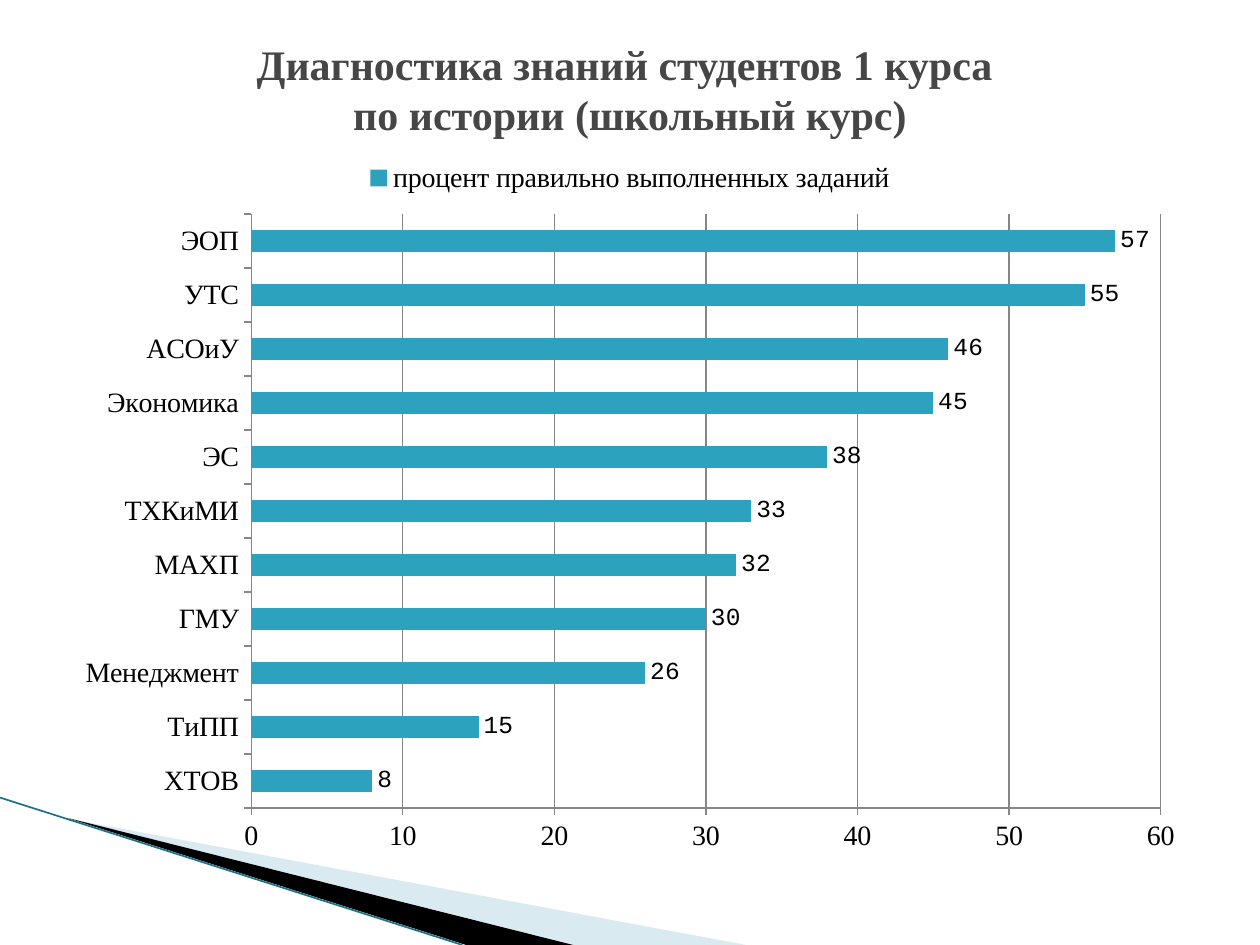
from lxml.etree import SubElement
from pptx import Presentation
from pptx.chart.data import CategoryChartData as ChartData
from pptx.dml.color import RGBColor as Rgb
from pptx.enum.chart import XL_CHART_TYPE as ChartType, XL_LABEL_POSITION as LabelPlace
from pptx.enum.chart import XL_LEGEND_POSITION as LegendPlace, XL_TICK_MARK as Tick
from pptx.enum.shapes import MSO_CONNECTOR as Connector
from pptx.enum.text import MSO_ANCHOR as Anchor, PP_ALIGN as Align
from pptx.oxml.ns import qn
from pptx.util import Inches, Pt

COLORS = {"bar": "2DA2BF", "title": "464646", "text": "000000", "grid": "868686",
          "pale": "A0CBDC", "dark": "000000", "edge": "1B7186"}
SERIF, MONO = "Times New Roman", "Courier New"
RESULTS = {"ХТОВ": 8, "ТиПП": 15, "Менеджмент": 26, "ГМУ": 30, "МАХП": 32, "ТХКиМИ": 33,
           "ЭС": 38, "Экономика": 45, "АСОиУ": 46, "УТС": 55, "ЭОП": 57}


def apply(target, values):
    for name, value in values.items():
        setattr(target, name, value)


class SlideMaker:
    """Draws styled elements on the current slide."""

    def __init__(self, page):
        self.page = page

    def color(self, name):
        return Rgb.from_string(COLORS[name])

    def font(self, font, size, name=SERIF, color="text", bold=False):
        apply(font, {"size": Pt(size), "name": name, "bold": bold})
        font.color.rgb = self.color(color)

    def line(self, line, color, width=0.75):
        line.color.rgb = self.color(color)
        line.width = Pt(width)

    def wedge(self, points, color, alpha=100):
        start, *others = [(Inches(x), Inches(y)) for x, y in points]
        builder = self.page.shapes.build_freeform(*start)
        builder.add_line_segments(others, close=True)
        shape = builder.convert_to_shape()
        shape.shadow.inherit = False
        shape.line.fill.background()
        shape.fill.solid()
        shape.fill.fore_color.rgb = self.color(color)
        if alpha < 100:
            tint = shape.fill._xPr.find(qn("a:solidFill"))[0]
            SubElement(tint, qn("a:alpha"), val=str(alpha * 1000))

    def edge(self, start, end, color):
        ends = [Inches(value) for value in start + end]
        link = self.page.shapes.add_connector(Connector.STRAIGHT, *ends)
        self.line(link.line, color, 0.95)
        SubElement(link._element.spPr, qn("a:effectLst"))

    def title(self, text, area):
        box = self.page.shapes.add_textbox(*map(Inches, area))
        apply(box.text_frame, {"word_wrap": True, "vertical_anchor": Anchor.MIDDLE})
        para = box.text_frame.paragraphs[0]
        para.text = text
        para.alignment = Align.CENTER
        for span in para.runs:
            self.font(span.font, 24, color="title", bold=True)

    def axis(self, axis):
        apply(axis, {"major_tick_mark": Tick.OUTSIDE, "minor_tick_mark": Tick.NONE})
        self.font(axis.tick_labels.font, 16)
        self.line(axis.format.line, "grid")

    def plot_area(self, chart, frame):
        area = chart._chartSpace.chart.plotArea
        layout = area.find(qn("c:layout"))
        if layout is None:
            layout = area.makeelement(qn("c:layout"))
            area.insert(0, layout)
        manual = SubElement(layout, qn("c:manualLayout"))
        settings = {"layoutTarget": "inner", "xMode": "edge", "yMode": "edge", **frame}
        for name, value in settings.items():
            SubElement(manual, qn(f"c:{name}"), val=str(value))

    def bars(self, name, results, area, frame):
        data = ChartData()
        data.categories = list(results)
        data.add_series(name, list(results.values()))
        chart = self.page.shapes.add_chart(
            ChartType.BAR_CLUSTERED, *map(Inches, area), data).chart
        apply(chart, {"has_title": False, "has_legend": True})
        self.font(chart.font, 18, MONO)
        apply(chart.legend, {"position": LegendPlace.TOP, "include_in_layout": False})
        self.font(chart.legend.font, 16)
        self.axis(chart.category_axis)
        self.axis(chart.value_axis)
        apply(chart.value_axis, {"minimum_scale": 0, "maximum_scale": 60,
                                 "major_unit": 10, "has_major_gridlines": True})
        self.line(chart.value_axis.major_gridlines.format.line, "grid")
        plot = chart.plots[0]
        apply(plot, {"gap_width": 150, "vary_by_categories": False, "has_data_labels": True})
        apply(plot.data_labels, {"show_value": True, "position": LabelPlace.OUTSIDE_END})
        self.font(plot.data_labels.font, 14, MONO)
        fill = plot.series[0].format.fill
        fill.solid()
        fill.fore_color.rgb = self.color("bar")
        self.plot_area(chart, frame)


def main():
    deck = Presentation()
    apply(deck, {"slide_width": Inches(10), "slide_height": Inches(7.5)})
    maker = SlideMaker(deck.slides.add_slide(deck.slide_layouts[6]))
    maker.wedge([(0.55, 6.5), (5.92, 7.5), (4.56, 7.5)], "pale", 40)
    maker.wedge([(0.53, 6.49), (4.55, 7.5), (3.7, 7.5)], "dark")
    maker.edge((0, 6.33), (3.67, 7.5), "edge")
    maker.bars("процент правильно выполненных заданий", RESULTS, (0.5, 1.17, 9, 5.7),
               {"x": 0.166, "y": 0.093, "w": 0.802, "h": 0.827})
    maker.title("Диагностика знаний студентов 1 курса \vпо истории (школьный курс)",
                (0.5, 0.16, 9, 1.09))
    deck.save("out.pptx")


if __name__ == "__main__":
    main()
